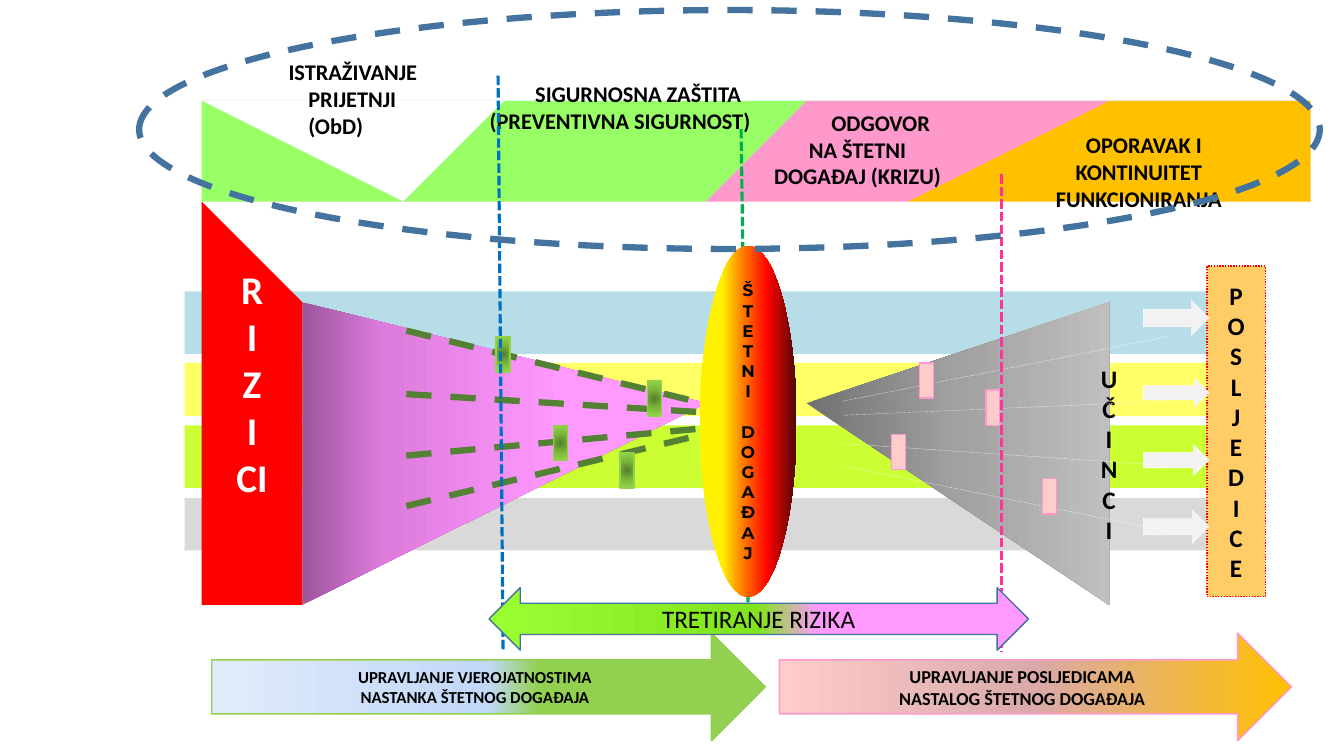
from lxml import etree
from pptx import Presentation
from pptx.dml.color import RGBColor
from pptx.enum.dml import MSO_LINE
from pptx.enum.shapes import MSO_CONNECTOR, MSO_SHAPE
from pptx.enum.text import MSO_ANCHOR, PP_ALIGN
from pptx.oxml import parse_xml
from pptx.oxml.ns import nsdecls, qn
from pptx.util import Inches, Pt

GREY_FADE = ([(0, "717171"), (50, "A1A1A1"), (100, "BFBFBF")], "linear")
GREEN_GLOW = ([(0, "57812A"), (50, "7BB73B"), (100, "92DA46")], "circle")


def rgb(value):
    return RGBColor.from_string(value)


def gradient_xml(stops, kind):
    marks = "".join(
        f'<a:gs pos="{pos * 1000}"><a:srgbClr val="{color}"/></a:gs>'
        for pos, color in stops)
    if kind == "circle":
        course = ('<a:path path="circle"><a:fillToRect l="50000" t="50000" '
                  'r="50000" b="50000"/></a:path>')
    else:
        course = '<a:lin ang="0" scaled="0"/>'
    return parse_xml(f'<a:gradFill {nsdecls("a")} rotWithShape="1">'
                     f'<a:gsLst>{marks}</a:gsLst>{course}</a:gradFill>')


def paint(shape, fill=None, line=None, width=1, dash=None):
    """Fill is a hex colour, a (stops, kind) gradient or None."""
    shape.shadow.inherit = False
    if isinstance(fill, str):
        shape.fill.solid()
        shape.fill.fore_color.rgb = rgb(fill)
    else:
        shape.fill.background()
        if fill:
            properties = shape._element.spPr
            properties.replace(properties.find(qn("a:noFill")), gradient_xml(*fill))
    if line:
        shape.line.color.rgb = rgb(line)
        shape.line.width = Pt(width)
        shape.line.dash_style = dash
    else:
        shape.line.fill.background()
    return shape


def add_preset(slide, preset, box, fill=None, line=None, width=1, dash=None):
    shape = slide.shapes.add_shape(preset, *map(Inches, box))
    return paint(shape, fill, line, width, dash)


def add_outline(slide, points, fill):
    builder = slide.shapes.build_freeform(*points[0], scale=Inches(1))
    builder.add_line_segments(points[1:], close=True)
    return paint(builder.convert_to_shape(), fill)


def add_line(slide, start, end, color, width, dash):
    line = slide.shapes.add_connector(
        MSO_CONNECTOR.STRAIGHT, *map(Inches, (*start, *end)))
    line.line.color.rgb = rgb(color)
    line.line.width = Pt(width)
    line.line.dash_style = dash
    etree.SubElement(line._element.spPr, qn("a:effectLst"))


def write(shape, lines, size, color="000000", bold=True, font="Calibri"):
    frame = shape.text_frame
    frame.text = "\n".join(lines)
    frame.vertical_anchor = MSO_ANCHOR.MIDDLE
    for paragraph in frame.paragraphs:
        paragraph.alignment = PP_ALIGN.CENTER
        for run in paragraph.runs:
            run.font.name = font
            run.font.size = Pt(size)
            run.font.bold = bold
            run.font.color.rgb = rgb(color)
    return frame


def write_column(shape, letters, size, **style):
    """Stack letters or short groups one below the other."""
    frame = write(shape, letters, size, **style)
    frame.word_wrap = False
    frame.margin_left = frame.margin_right = 0
    return frame


def add_phase(slide, points, fill, box, lines, indents, left_aligned=()):
    """A stepped band with its label; indents shift single lines."""
    add_outline(slide, points, fill)
    label = slide.shapes.add_textbox(*map(Inches, box))
    frame = write(label, lines, 16)
    frame.word_wrap = True
    frame.vertical_anchor = MSO_ANCHOR.TOP
    for row, indent in indents.items():
        properties = frame.paragraphs[row]._p.get_or_add_pPr()
        properties.set("marL", str(Inches(indent)))
    for row in left_aligned:
        frame.paragraphs[row].alignment = PP_ALIGN.LEFT


def add_barriers(slide, corners, fill, line):
    for left, top in corners:
        add_preset(slide, MSO_SHAPE.RECTANGLE, (left, top, 0.14, 0.35), fill, line)


def add_risk_side(slide):
    # Background stripes
    for top, height, color in [(2.89, 0.62, "B7DEE8"), (3.6, 0.53, "FFFF66"),
                               (4.22, 0.62, "CCFF33"), (4.94, 0.52, "D9D9D9")]:
        add_preset(slide, MSO_SHAPE.RECTANGLE, (1.83, top, 10.31, height), color)

    # Funnel, threat paths and preventive barriers
    add_outline(slide, [(2.64, 5.53), (2.68, 2.73), (6.92, 3.99), (6.98, 4.25),
                        (6.88, 4.33)],
                ([(0, "9C569C"), (20, "DD7BDD"), (65, "FF99FF")], "linear"))
    for start, end in [(3.28, 4), (3.91, 4.09), (4.52, 4.25), (5.02, 4.31)]:
        add_line(slide, (4.03, start), (6.97, end), "548235", 4.5, MSO_LINE.DASH)
    add_barriers(slide, [(4.92, 3.34), (5.49, 4.22), (6.42, 3.78), (6.15, 4.49)],
                 GREEN_GLOW, "92D050")


def add_phases(slide):
    add_phase(slide, [(2.3, 0.52), (12.54, 0.53), (12.49, 0.7), (5.42, 0.7),
                      (4.13, 1.44), (2.28, 1.43)],
              "66CCFF", (2.06, 0.53, 2.88, 0.91),
              ["ISTRAŽIVANJE", "PRIJETNJI", "(ObD)"], {1: 0.9, 2: 0.9}, (1, 2))
    add_phase(slide, [(2.26, 1.95), (9.41, 1.97), (10.76, 1.21), (12.54, 1.21),
                      (12.52, 2.14), (2.24, 2.14)],
              "FFC000", (9.65, 1.25, 3.29, 0.92),
              ["OPORAVAK I", "KONTINUITET", "FUNKCIONIRANJA"], {0: 0.1})
    add_phase(slide, [(2.24, 1.49), (4.08, 1.51), (5.41, 0.76), (12.54, 0.76),
                      (12.54, 0.91), (8.09, 0.91), (6.76, 1.68), (2.24, 1.68),
                      (2.28, 1.53)],
              "99FF66", (4.23, 0.75, 3.84, 0.64),
              ["SIGURNOSNA ZAŠTITA", "(PREVENTIVNA SIGURNOST)"], {0: 0.36})
    add_phase(slide, [(2.24, 1.72), (6.72, 1.73), (8.05, 0.99), (12.52, 0.99),
                      (12.54, 1.18), (10.74, 1.18), (9.38, 1.92), (2.24, 1.9)],
              "FF99CC", (6.91, 1.03, 3.19, 0.92),
              ["ODGOVOR", "NA ŠTETNI", "DOGAĐAJ (KRIZU)"], {0: 0.46})


def add_effect_side(slide):
    # Consequences and the arrows leading to them
    consequences = add_preset(slide, MSO_SHAPE.RECTANGLE, (11.97, 2.64, 0.58, 3.28),
                              "FFCC66", "FF0000", 1, MSO_LINE.ROUND_DOT)
    write_column(consequences, "POSLJEDICE", 18)
    for top, height in [(2.98, 0.35), (3.75, 0.29), (4.41, 0.31), (5.06, 0.33)]:
        add_preset(slide, MSO_SHAPE.RIGHT_ARROW, (11.34, top, 0.65, height),
                   "F2F2F2", "FFFFFF", 0.25)

    # Spreading effects
    add_outline(slide, [(7.57, 4.47), (7.57, 4.11), (10.75, 2.81), (10.73, 5.71)],
                GREY_FADE)
    effects = add_outline(slide, [(10.75, 5.72), (10.79, 2.83), (11.34, 2.62),
                                  (11.34, 5.9)], GREY_FADE)
    write_column(effects, "UČINCI", 18)
    for start, end in [(5.27, 4.62), (4.62, 4.4), (3.98, 4.12), (3.34, 3.98)]:
        add_line(slide, (11.58, start), (8.36, end), "FFFFFF", 0.25, MSO_LINE.DASH)
    add_barriers(slide, [(10.34, 4.75), (9.78, 3.87), (8.84, 4.31), (9.12, 3.6)],
                 "FFCCCC", "FF99CC")


def add_event(slide):
    # Phase borders around the harmful event
    for start, end, color in [((4.94, 0.75), (4.99, 6.46), "0070C0"),
                              ((7.35, 1.28), (7.42, 6.01), "00B050"),
                              ((9.93, 1.73), (9.93, 6.46), "FF3399")]:
        add_line(slide, start, end, color, 2.25, MSO_LINE.SQUARE_DOT)
    event = add_preset(slide, MSO_SHAPE.OVAL, (6.94, 2.44, 0.96, 3.48),
                       ([(23, "FFF200"), (45, "FF7A00"), (70, "FF0300"),
                         (100, "4D0808")], "linear"))
    frame = write_column(event, "ŠTETNIDOGAĐAJ", 12, font="Montserrat")
    frame.paragraphs[len("ŠTETNI")].space_before = Pt(14.5)


def add_management(slide):
    likelihood = add_preset(slide, MSO_SHAPE.RIGHT_ARROW, (2.1, 6.28, 5.49, 1.07),
                            ([(0, "E1EBFB"), (50, "C2D8F8"), (59, "92D050")], "linear"),
                            "92D050")
    write(likelihood, ["UPRAVLJANJE VJEROJATNOSTIMA", "NASTANKA ŠTETNOG DOGAĐAJA"], 12)
    impact = add_preset(slide, MSO_SHAPE.RIGHT_ARROW, (7.73, 6.28, 5.08, 1.07),
                        ([(0, "FFCCCC"), (50, "DAA9A9"), (100, "FFC000")], "linear"),
                        "FF99CC")
    write(impact, ["UPRAVLJANJE POSLJEDICAMA", "NASTALOG ŠTETNOG DOGAĐAJA"], 13)
    treatment = add_preset(slide, MSO_SHAPE.LEFT_RIGHT_ARROW, (4.85, 5.83, 5.35, 0.62),
                           ([(0, "99FF33"), (50, "81E41E"), (61, "FF99FF")], "linear"),
                           "43739E")
    write(treatment, ["TRETIRANJE RIZIKA"], 18, bold=False)


def main():
    deck = Presentation()
    deck.slide_width, deck.slide_height = Inches(13.33), Inches(7.5)
    slide = deck.slides.add_slide(deck.slide_layouts[6])
    add_risk_side(slide)
    add_phases(slide)
    add_effect_side(slide)
    add_event(slide)
    add_management(slide)

    # Risks and the ring around all phases
    risks = add_outline(slide, [(2.08, 2.46), (2.59, 2.73), (2.58, 5.55), (2.08, 5.8)],
                        "FF0000")
    frame = write_column(risks, ["R", "I", "Z", "I", "CI"], 28, color="FFFFFF")
    frame.margin_bottom = Inches(0.46)
    add_preset(slide, MSO_SHAPE.OVAL, (1.38, 0.1, 11.71, 2.37), None,
               "43739E", 4.5, MSO_LINE.DASH)
    deck.save("out.pptx")


if __name__ == "__main__":
    main()
